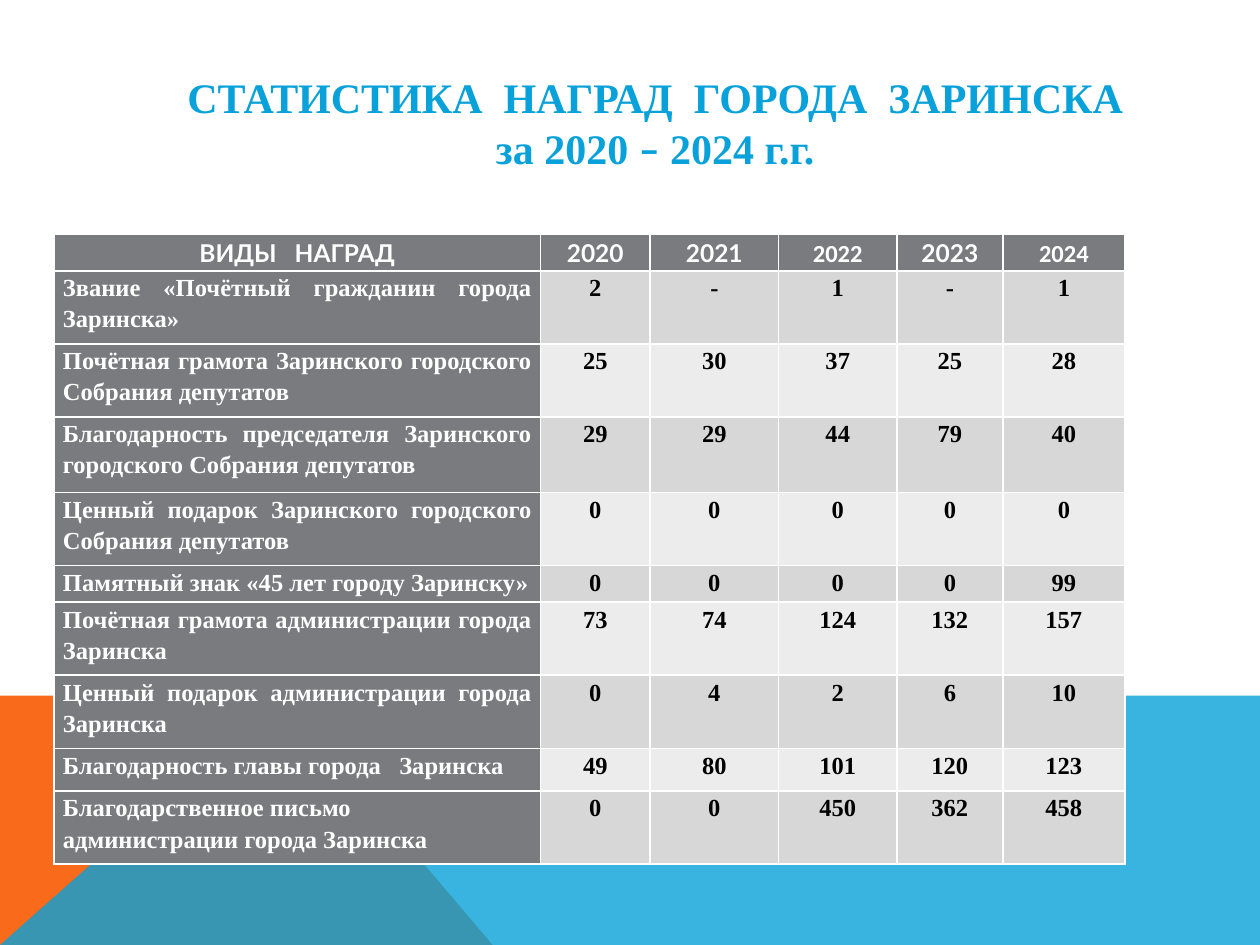
from lxml.etree import SubElement
from pptx import Presentation
from pptx.dml.color import RGBColor
from pptx.enum.text import MSO_ANCHOR, MSO_AUTO_SIZE, PP_ALIGN
from pptx.oxml.ns import qn
from pptx.util import Inches, Pt

SLIDE_WIDTH, SLIDE_HEIGHT = 10, 7.5
WHITE = RGBColor(0xFF, 0xFF, 0xFF)
BLACK = RGBColor(0x00, 0x00, 0x00)
BLUE = RGBColor(0x08, 0xA1, 0xD9)
ORANGE = RGBColor(0xF9, 0x6A, 0x1B)
GRAY = RGBColor(0x79, 0x7B, 0x7E)
BANDS = (RGBColor(0xD7, 0xD7, 0xD8), RGBColor(0xEC, 0xEC, 0xEC))

SERIF, SANS, LATIN = "Times New Roman", "Calibri", "Lato"
TITLE = (
    (("СТАТИСТИКА  НАГРАД  ГОРОДА  ЗАРИНСКА", SERIF),),
    (("за 2020 ", SERIF), ("–", SANS), (" 2024 г.г.", SERIF)),
)
HEADER = ("ВИДЫ   НАГРАД", "2020", "2021", "2022", "2023", "2024")
HEADER_FONTS = (LATIN, LATIN, LATIN, SANS, LATIN, SANS)
AWARDS = (
    ("Звание «Почётный гражданин города Заринска»", "2", "-", "1", "-", "1"),
    ("Почётная грамота Заринского городского Собрания депутатов", "25", "30", "37", "25", "28"),
    ("Благодарность председателя Заринского городского Собрания депутатов",
     "29", "29", "44", "79", "40"),
    ("Ценный подарок Заринского городского Собрания депутатов", "0", "0", "0", "0", "0"),
    ("Памятный знак «45 лет городу Заринску»", "0", "0", "0", "0", "99"),
    ("Почётная грамота администрации города Заринска", "73", "74", "124", "132", "157"),
    ("Ценный подарок администрации города Заринска", "0", "4", "2", "6", "10"),
    ("Благодарность главы города   Заринска", "49", "80", "101", "120", "123"),
    ("Благодарственное письмо\nадминистрации города Заринска", "0", "0", "450", "362", "458"),
)
COLUMN_WIDTHS = (3.86, 0.87, 1.02, 0.94, 0.84, 0.97)
ROW_HEIGHTS = (0.29, 0.58, 0.58, 0.6, 0.58, 0.29, 0.58, 0.58, 0.34, 0.58)


def add_run(paragraph, text, *, font, size, color):
    """Append a bold run with the given font, size and colour."""
    run = paragraph.add_run()
    run.text = text
    run.font.name = font
    run.font.size = Pt(size)
    run.font.bold = True
    run.font.color.rgb = color


def add_polygon(slide, points, color, opacity=100):
    """Draw a closed outline filled with a colour of the given opacity."""
    corners = [(Inches(x), Inches(y)) for x, y in points]
    builder = slide.shapes.build_freeform(*corners[0], scale=1.0)
    builder.add_line_segments(corners[1:], close=True)
    shape = builder.convert_to_shape()
    shape.shadow.inherit = False
    shape.line.fill.background()
    shape.fill.solid()
    shape.fill.fore_color.rgb = color
    if opacity < 100:
        color_element = shape.fill._xPr.find(qn("a:solidFill"))[0]
        SubElement(color_element, qn("a:alpha"), val=str(opacity * 1000))


def add_footer_band(slide):
    """Draw the two overlapping coloured areas along the bottom edge."""
    top, peak, foot = 5.52, 2.23, 3.91
    add_polygon(slide, [(0, SLIDE_HEIGHT), (0, top), (peak, top), (foot, SLIDE_HEIGHT)], ORANGE)
    add_polygon(slide, [(0, SLIDE_HEIGHT), (peak, top), (SLIDE_WIDTH, top),
                        (SLIDE_WIDTH, SLIDE_HEIGHT)], BLUE, opacity=80)


def format_title(slide):
    """Place the title placeholder and fill in its lines."""
    title = slide.shapes.title
    title.left, title.top = Inches(1.35), Inches(0.52)
    title.width, title.height = Inches(7.7), Inches(1.21)
    frame = title.text_frame
    frame.auto_size = MSO_AUTO_SIZE.NONE
    frame.word_wrap = False
    frame.vertical_anchor = MSO_ANCHOR.TOP
    for index, line in enumerate(TITLE):
        paragraph = frame.add_paragraph() if index else frame.paragraphs[0]
        paragraph.alignment = PP_ALIGN.CENTER
        for text, font in line:
            add_run(paragraph, text, font=font, size=24, color=BLUE)


def fill_cell(cell, text, *, font, color, fill, alignment):
    """Write the text of a table cell and colour the cell."""
    cell.margin_left = cell.margin_right = Inches(0.07)
    cell.margin_top = cell.margin_bottom = 0
    cell.fill.solid()
    cell.fill.fore_color.rgb = fill
    for index, line in enumerate(text.split("\n")):
        frame = cell.text_frame
        paragraph = frame.add_paragraph() if index else frame.paragraphs[0]
        paragraph.alignment = alignment
        paragraph.line_spacing = 1.15
        add_run(paragraph, line, font=font, size=14, color=color)


def add_awards_table(slide):
    """Add the table of awards by year."""
    frame = slide.shapes.add_table(
        len(ROW_HEIGHTS), len(COLUMN_WIDTHS), Inches(0.43), Inches(1.86),
        Inches(sum(COLUMN_WIDTHS)), Inches(sum(ROW_HEIGHTS)))
    table = frame.table
    for column, width in zip(table.columns, COLUMN_WIDTHS):
        column.width = Inches(width)
    for row, height in zip(table.rows, ROW_HEIGHTS):
        row.height = Inches(height)
    for column, (text, font) in enumerate(zip(HEADER, HEADER_FONTS)):
        fill_cell(table.cell(0, column), text, font=font, color=WHITE, fill=GRAY,
                  alignment=PP_ALIGN.CENTER)
    for row, (award, *counts) in enumerate(AWARDS, start=1):
        fill_cell(table.cell(row, 0), award, font=SERIF, color=WHITE, fill=GRAY,
                  alignment=PP_ALIGN.JUSTIFY)
        for column, count in enumerate(counts, start=1):
            fill_cell(table.cell(row, column), count, font=SERIF, color=BLACK,
                      fill=BANDS[(row - 1) % 2], alignment=PP_ALIGN.CENTER)


def main():
    """Build the slide and save the presentation."""
    presentation = Presentation()
    presentation.slide_width = Inches(SLIDE_WIDTH)
    presentation.slide_height = Inches(SLIDE_HEIGHT)
    slide = presentation.slides.add_slide(presentation.slide_layouts[5])
    add_footer_band(slide)
    format_title(slide)
    add_awards_table(slide)
    presentation.save("out.pptx")


if __name__ == "__main__":
    main()
